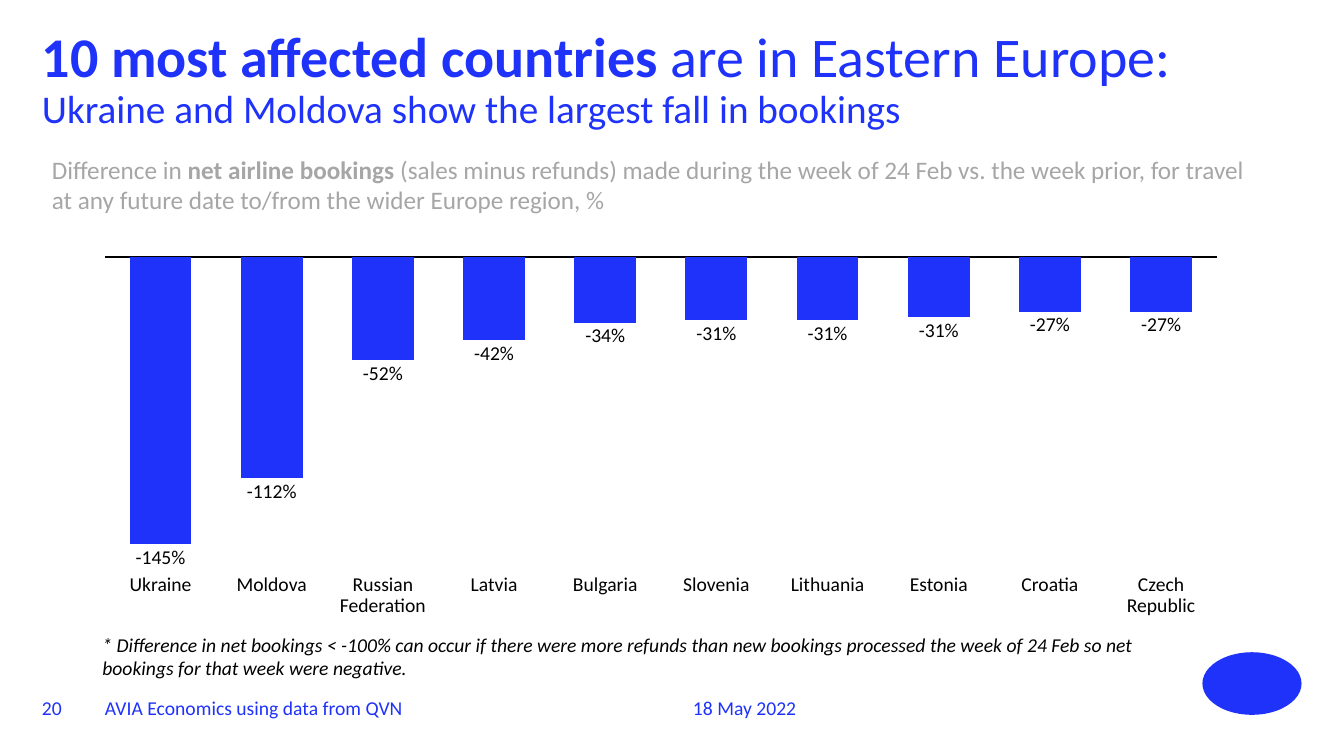
"""Build a slide that ranks the ten countries with the largest fall in bookings."""
from dataclasses import dataclass

from lxml import etree
from pptx import Presentation
from pptx import util as u
from pptx.chart.data import CategoryChartData
from pptx.dml.color import RGBColor
from pptx.enum import chart as ch
from pptx.enum import shapes, text

BLUE = RGBColor(0x1E, 0x32, 0xFA)
GRAY = RGBColor(0xA6, 0xA6, 0xA6)
BLACK = RGBColor(0, 0, 0)
FONT = "Calibri"
COLS, ROWS = 32, 18
CELL = u.Inches(7.5) / ROWS
TOP, LOW = text.MSO_ANCHOR.TOP, text.MSO_ANCHOR.BOTTOM
LEFT, CENTER = text.PP_ALIGN.LEFT, text.PP_ALIGN.CENTER


@dataclass(frozen=True)
class Box:
    """Place on the grid, in columns and rows."""
    col: float
    row: float
    wide: float
    high: float

    def emu(self) -> list[u.Emu]:
        """Give left, top, width and height in slide units."""
        return [u.Emu(round(n * CELL)) for n in (self.col, self.row, self.wide, self.high)]


@dataclass(frozen=True)
class Run:
    """Stretch of text in one style."""
    words: str
    size: float = 14
    bold: bool = False
    italic: bool = False


@dataclass(frozen=True)
class Note:
    """Text box with lines of runs."""
    box: Box
    lines: list[list[Run]]
    color: RGBColor = BLACK
    anchor: text.MSO_ANCHOR = TOP
    align: text.PP_ALIGN = LEFT
    pad: bool = False
    lead: float = 1


@dataclass(frozen=True)
class Land:
    """Country with its bar depth and its change in percent."""
    name: str
    bar: int
    fall: int


LANDS = [
    Land("Ukraine", -100, -145),
    Land("Moldova", -77, -112),
    Land("Russian Federation", -36, -52),
    Land("Latvia", -29, -42),
    Land("Bulgaria", -23, -34),
    Land("Slovenia", -22, -31),
    Land("Lithuania", -22, -31),
    Land("Estonia", -21, -31),
    Land("Croatia", -19, -27),
    Land("Czech Republic", -19, -27),
]
CHART = Box(2.28, 5.9, 26.9, 7.27)
PLOT = Box(2.5, 6.12, 26.47, 6.84)
SHARE = {
    "x": (PLOT.col - CHART.col) / CHART.wide,
    "y": (PLOT.row - CHART.row) / CHART.high,
    "w": PLOT.wide / CHART.wide,
    "h": PLOT.high / CHART.high,
}
NAMES = 13.68
LOGO = Box(28.63, 15.53, 2.36, 1.49)

NOTES = [
    Note(Box(1, 0.7, 30, 2.74), [
        [Run("10 most affected countries ", 40, bold=True), Run("are in Eastern Europe:", 40)],
        [Run("Ukraine and Moldova show the largest fall in bookings", 28)],
    ], BLUE, lead=0.9),
    Note(Box(1, 3.55, 29.33, 1.7), [[
        Run("Difference in ", 18),
        Run("net airline bookings ", 18, bold=True),
        Run("(sales minus refunds) made during the week of 24 Feb vs. the week prior, "
            "for travel at any future date to/from the wider Europe region, %", 18),
    ]], GRAY, pad=True),
    Note(Box(2.2, 14.95, 26.11, 1.37), [[
        Run("* Difference in net bookings < -100% can occur if there were more refunds than new "
            "bookings processed the week of 24 Feb so net bookings for that week were negative.",
            italic=True),
    ]], pad=True),
    Note(Box(1, 16.18, 1.2, 0.96), [[Run("20")]], BLUE, LOW),
    Note(Box(2.5, 16.18, 13, 0.96), [[Run("AVIA Economics using data from QVN")]], BLUE, LOW),
    Note(Box(16.5, 16.18, 7.2, 0.96), [[Run("18 May 2022")]], BLUE, LOW),
]


def write(slide, note: Note) -> None:
    """Draw one text box, run by run."""
    frame = slide.shapes.add_textbox(*note.box.emu()).text_frame
    frame.word_wrap = True
    frame.vertical_anchor = note.anchor
    if not note.pad:
        frame.margin_left = frame.margin_right = frame.margin_top = frame.margin_bottom = 0
    para = frame.paragraphs[0]
    para.alignment = note.align
    para.line_spacing = note.lead
    for spot, line in enumerate(note.lines):
        if spot:
            para.add_line_break()
        for part in line:
            run = para.add_run()
            run.text = part.words
            font = run.font
            font.name, font.size = FONT, u.Pt(part.size)
            font.bold, font.italic = part.bold, part.italic
            font.color.rgb = note.color


def plot(slide, lands: list[Land]) -> None:
    """Draw the bars that hang from the zero line."""
    data = CategoryChartData()
    data.categories = [str(n + 1) for n in range(len(lands))]
    data.add_series("Series 1", [land.bar for land in lands])
    kind = ch.XL_CHART_TYPE.COLUMN_STACKED
    chart = slide.shapes.add_chart(kind, *CHART.emu(), data).chart
    chart.has_legend = chart.has_title = False
    chart.font.name, chart.font.size = FONT, u.Pt(10)
    chart.font.color.rgb = BLACK
    bars = chart.plots[0]
    bars.gap_width, bars.overlap, bars.vary_by_categories = 80, 100, False
    fill = bars.series[0].format.fill
    fill.solid()
    fill.fore_color.rgb = BLUE
    bars.series[0].invert_if_negative = False

    base = chart.category_axis
    base.tick_label_position = ch.XL_TICK_LABEL_POSITION.NONE
    base.major_tick_mark = base.minor_tick_mark = ch.XL_TICK_MARK.NONE
    base.format.line.color.rgb = BLACK
    base.format.line.width = u.Pt(0.75)
    scale = chart.value_axis
    scale.minimum_scale, scale.maximum_scale = -100, 0
    scale.has_major_gridlines = False
    scale.visible = False

    area = chart.element.chart.plotArea
    space = etree.QName(area).namespace
    for old in area.findall(f"{{{space}}}layout"):
        area.remove(old)
    lay = etree.Element(f"{{{space}}}layout")
    area.insert(0, lay)
    hand = etree.SubElement(lay, f"{{{space}}}manualLayout")
    modes = {"layoutTarget": "inner", "xMode": "edge", "yMode": "edge"}
    for tag, val in (modes | SHARE).items():
        etree.SubElement(hand, f"{{{space}}}{tag}").set("val", str(val))


def label(slide, lands: list[Land]) -> None:
    """Put the name and the change of each country under its bar."""
    step = PLOT.wide / len(lands)
    for spot, land in enumerate(lands):
        mid = PLOT.col + (spot + 0.5) * step
        foot = PLOT.row - land.bar / 100 * PLOT.high + 0.07
        for words, row, wide, high in ((land.name, NAMES, 2.36, 1),
                                       (f"{land.fall}%", foot, 1.6, 0.5)):
            box = Box(mid - wide / 2, row, wide, high)
            write(slide, Note(box, [[Run(words)]], align=CENTER, lead=0.9))


def mark(slide, box: Box) -> None:
    """Draw the plain emblem in the corner."""
    disc = slide.shapes.add_shape(shapes.MSO_SHAPE.OVAL, *box.emu())
    disc.shadow.inherit = False
    disc.fill.solid()
    disc.fill.fore_color.rgb = BLUE
    disc.line.fill.background()


def main() -> None:
    """Build and save the slide."""
    deck = Presentation()
    deck.slide_width, deck.slide_height = round(COLS * CELL), round(ROWS * CELL)
    slide = deck.slides.add_slide(deck.slide_layouts[6])
    mark(slide, LOGO)
    plot(slide, LANDS)
    label(slide, LANDS)
    for note in NOTES:
        write(slide, note)
    deck.save("out.pptx")


if __name__ == "__main__":
    main()
